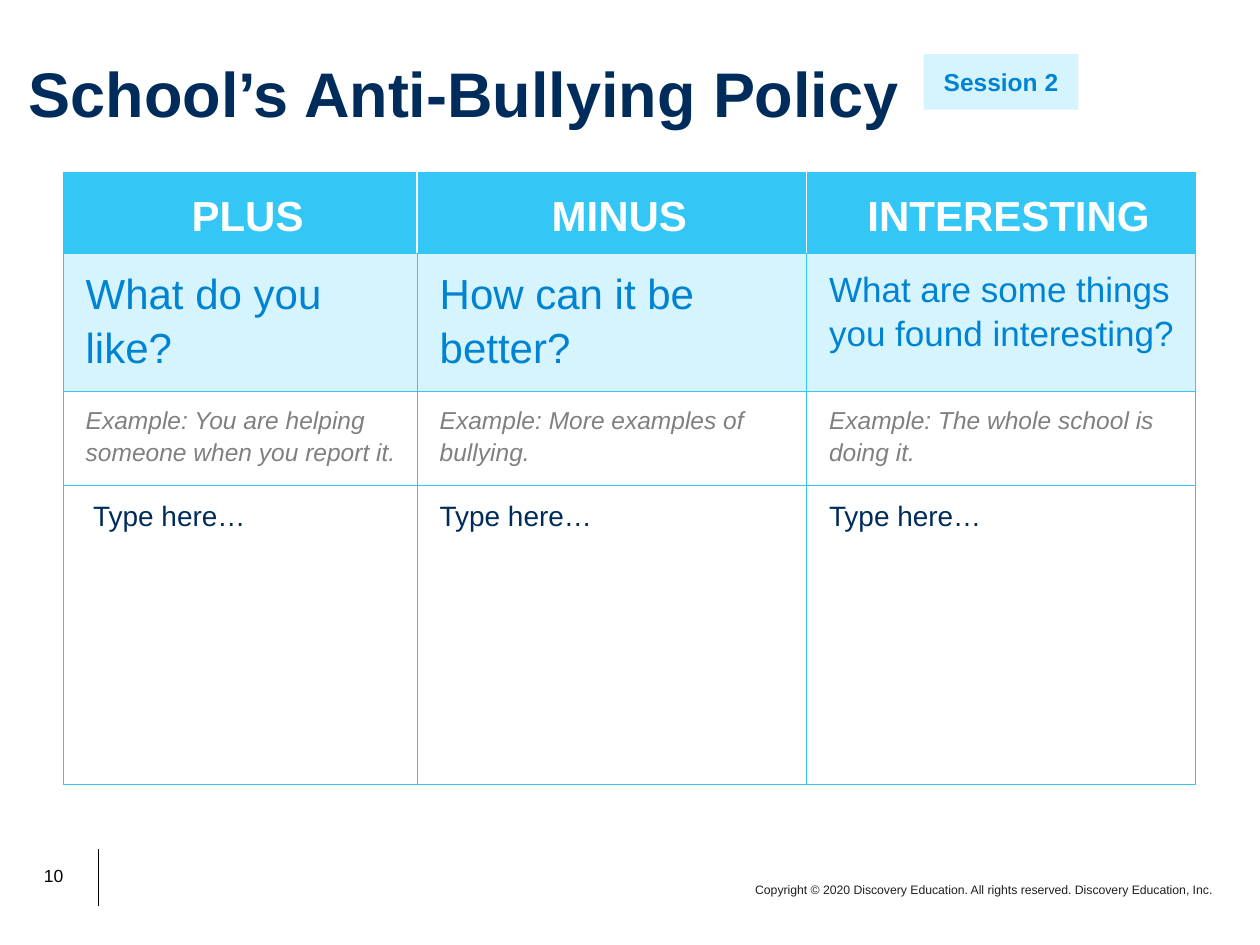
import dataclasses

import lxml.etree
import pptx
import pptx.dml.color
import pptx.enum.shapes
import pptx.enum.text
import pptx.oxml.ns
import pptx.util

Inches = pptx.util.Inches
Pt = pptx.util.Pt
Align = pptx.enum.text.PP_ALIGN
Anchor = pptx.enum.text.MSO_ANCHOR
qn = pptx.oxml.ns.qn


@dataclasses.dataclass(frozen=True)
class Theme:
    font: str = "Arial"
    navy: str = "002C5C"
    blue: str = "0083D3"
    sky: str = "34C7F5"
    pale: str = "D6F4FD"
    gray: str = "808080"
    ink: str = "221E1F"
    black: str = "000000"
    white: str = "FFFFFF"
    title: int = 36
    head: int = 24
    ask: int = 20
    entry: int = 16
    note: int = 14
    page: int = 10
    legal: int = 7


def color(code):
    return pptx.dml.color.RGBColor.from_string(code)


class Maker:
    def __init__(self, theme, slide):
        self.theme = theme
        self.slide = slide

    def words(self, frame, text, size, tint, align=Align.LEFT,
              bold=False, slant=False, space=None):
        frame.word_wrap = True
        para = frame.paragraphs[0]
        para.text = text
        para.alignment = align
        para.line_spacing = space
        font = para.font
        font.name, font.size = self.theme.font, Pt(size)
        font.bold, font.italic = bold, slant
        font.color.rgb = color(tint)

    def title(self, text, box):
        shape = self.slide.shapes.title
        shape.left, shape.top, shape.width, shape.height = map(Inches, box)
        frame = shape.text_frame
        frame.vertical_anchor = Anchor.MIDDLE
        self.words(frame, text, self.theme.title, self.theme.navy,
                   bold=True, space=0.9)

    def label(self, text, box, size, tint):
        shape = self.slide.shapes.add_textbox(*map(Inches, box))
        self.words(shape.text_frame, text, size, tint, Align.RIGHT)

    def badge(self, text, box):
        shape = self.slide.shapes.add_shape(
            pptx.enum.shapes.MSO_SHAPE.RECTANGLE, *map(Inches, box))
        shape.shadow.inherit = False
        shape.fill.solid()
        shape.fill.fore_color.rgb = color(self.theme.pale)
        shape.line.fill.background()
        frame = shape.text_frame
        frame.vertical_anchor = Anchor.MIDDLE
        frame.margin_top = frame.margin_bottom = Inches(0.1)
        self.words(frame, text, self.theme.note, self.theme.blue,
                   Align.CENTER, bold=True)

    def rule(self, start, end):
        line = self.slide.shapes.add_connector(
            pptx.enum.shapes.MSO_CONNECTOR.STRAIGHT,
            *map(Inches, start + end))
        line.line.color.rgb = color(self.theme.black)
        line.line.width = Pt(0.5)
        props = line._element.spPr
        lxml.etree.SubElement(props, qn("a:effectLst"))

    def edges(self, cell, sides):
        # Borders stand before the fill in the cell properties
        props = cell._tc.get_or_add_tcPr()
        for spot, side in enumerate("LRTB"):
            tint, width = sides.get(side, (self.theme.sky, 0.5))
            line = lxml.etree.Element(qn("a:ln" + side), w=str(Pt(width)))
            fill = lxml.etree.SubElement(line, qn("a:solidFill"))
            lxml.etree.SubElement(fill, qn("a:srgbClr"), val=tint)
            props.insert(spot, line)

    def table(self, place, widths, heights):
        grid = self.slide.shapes.add_table(
            len(heights), len(widths), *map(Inches, place),
            Inches(sum(widths)), Inches(sum(heights))).table
        for col, width in zip(grid.columns, widths):
            col.width = Inches(width)
        for row, height in zip(grid.rows, heights):
            row.height = Inches(height)
        return grid

    def cell(self, cell, text, fill, sides, anchor=Anchor.TOP, **style):
        cell.margin_left, cell.margin_right = Inches(0.18), Inches(0.06)
        cell.margin_top = cell.margin_bottom = Inches(0.09)
        cell.vertical_anchor = anchor
        if fill:
            cell.fill.solid()
            cell.fill.fore_color.rgb = color(fill)
        else:
            cell.fill.background()
        self.edges(cell, sides)
        self.words(cell.text_frame, text, space=1.15, **style)


def main():
    theme = Theme()
    deck = pptx.Presentation()
    deck.slide_width, deck.slide_height = Inches(10), Inches(7.5)
    slide = deck.slides.add_slide(deck.slide_layouts[5])
    make = Maker(theme, slide)

    # Footer
    make.rule((0.78, 6.74), (0.78, 7.19))
    make.label("10", (0.19, 6.82, 0.41, 0.27), theme.page, theme.black)
    make.label("Copyright © 2020 Discovery Education. All rights reserved. "
               "Discovery Education, Inc.",
               (5.08, 6.95, 4.64, 0.22), theme.legal, theme.ink)

    # Title
    make.title("School’s Anti-Bullying Policy", (0.13, 0.4, 8.44, 0.74))

    # Table: each row has its text, fill and style
    rows = [
        (("PLUS", "MINUS", "INTERESTING"), theme.sky,
         dict(size=theme.head, tint=theme.white, bold=True,
              align=Align.CENTER, anchor=Anchor.MIDDLE)),
        (("What do you like?", "How can it be better?",
          "What are some things you found interesting?"), theme.pale,
         dict(size=theme.head, tint=theme.blue)),
        (("Example: You are helping someone when you report it.",
          "Example: More examples of bullying.",
          "Example: The whole school is doing it."), None,
         dict(size=theme.note, tint=theme.gray, slant=True)),
        (("Type here…",) * 3, None,
         dict(size=theme.entry, tint=theme.navy)),
    ]
    grid = make.table((0.5, 1.37), (2.81, 3.09, 3.09),
                      (0.59, 1.07, 0.74, 2.38))
    split = (theme.white, 1)
    heads = ({"R": split}, {"L": split, "R": split}, {"L": split})
    for down, (texts, fill, style) in enumerate(rows):
        for over, text in enumerate(texts):
            sides = heads[over] if down == 0 else {}
            make.cell(grid.cell(down, over), text, fill, sides, **style)

    # The long question is smaller, and the first entry is set in a little
    grid.cell(1, 2).text_frame.paragraphs[0].font.size = Pt(theme.ask)
    grid.cell(3, 0).margin_left = Inches(0.24)

    # Session badge
    make.badge("Session 2", (7.33, 0.43, 1.23, 0.44))

    deck.save("out.pptx")


if __name__ == "__main__":
    main()
